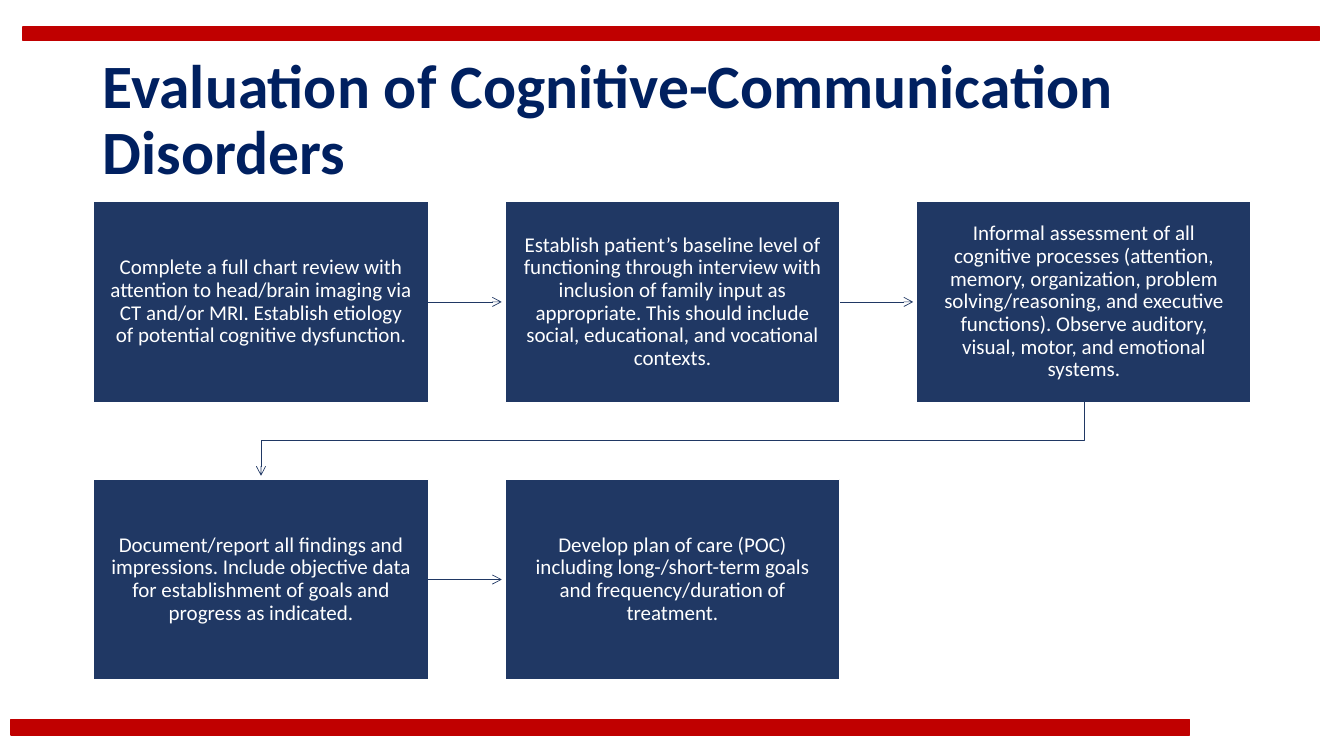
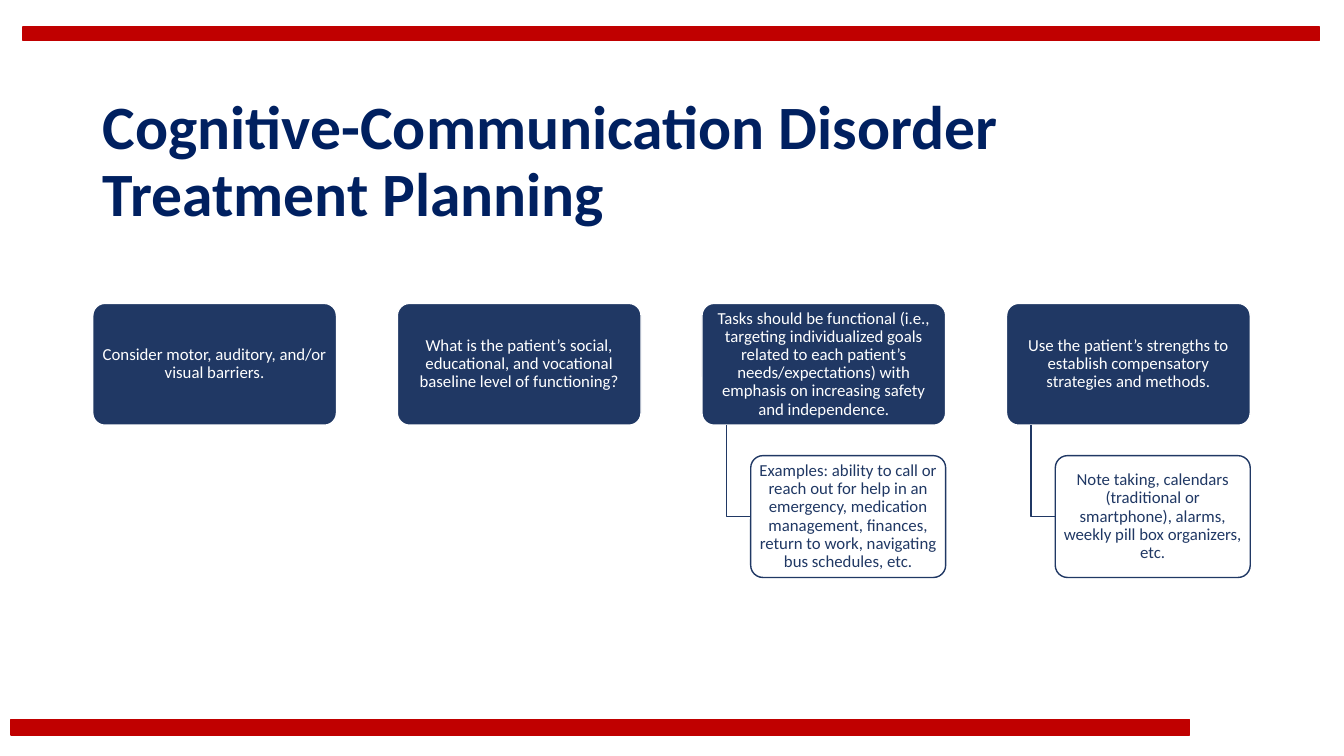
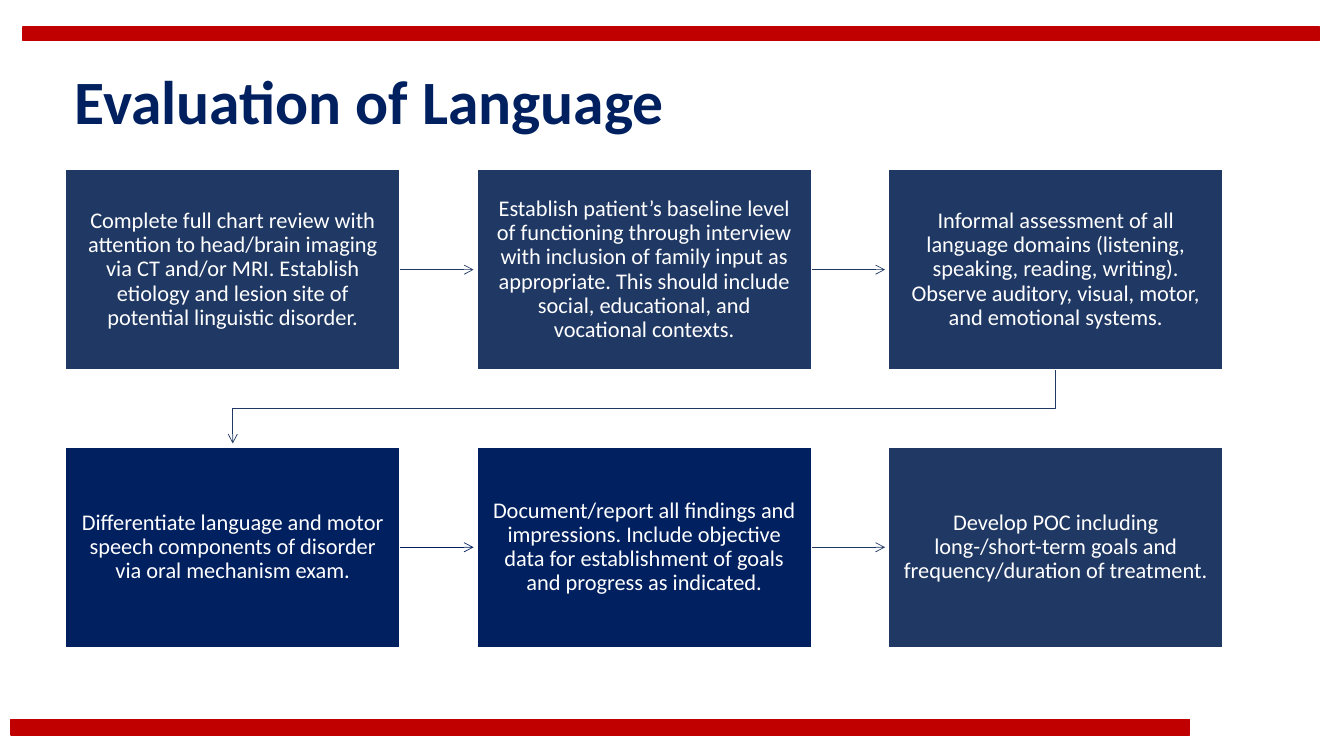
from collections import namedtuple
from itertools import pairwise

from lxml.etree import SubElement
from pptx import Presentation
from pptx.dml.color import RGBColor
from pptx.enum.shapes import MSO_CONNECTOR, MSO_SHAPE
from pptx.enum.text import MSO_ANCHOR, MSO_AUTO_SIZE, PP_ALIGN
from pptx.oxml.ns import qn
from pptx.util import Inches, Pt

COLORS = {"red": "C00000", "navy": "002060", "slate": "203864", "white": "FFFFFF"}
FONT = "Calibri"
SLIDE_WIDTH, SLIDE_HEIGHT = 13.33, 7.5
TITLE_WIDTH, TITLE_HEIGHT = 11.5, 1.45
FLOW_WIDTH = 11.48

Box = namedtuple("Box", "left top width height")
BANDS = [Box(0.11, 7.14, 11.69, 0.15), Box(0.23, 0.27, 12.86, 0.13)]

COGNITIVE_STEPS = [
    ("Complete a full chart review with attention to head/brain imaging via CT and/or MRI. "
     "Establish etiology of potential cognitive dysfunction.", "slate"),
    ("Establish patient’s baseline level of functioning through interview with inclusion of "
     "family input as appropriate. This should include social, educational, and vocational "
     "contexts.", "slate"),
    ("Informal assessment of all cognitive processes (attention, memory, organization, problem "
     "solving/reasoning, and executive functions). Observe auditory, visual, motor, and "
     "emotional systems.", "slate"),
    ("Document/report all findings and impressions. Include objective data for establishment "
     "of goals and progress as indicated.", "slate"),
    ("Develop plan of care (POC) including long-/short-term goals and frequency/duration of "
     "treatment.", "slate"),
]
LANGUAGE_STEPS = [
    ("Complete full chart review with attention to head/brain imaging via CT and/or MRI. "
     "Establish etiology and lesion site of potential linguistic disorder.", "slate"),
    COGNITIVE_STEPS[1],
    ("Informal assessment of all language domains (listening, speaking, reading, writing). "
     "Observe auditory, visual, motor, and emotional systems.", "slate"),
    ("Differentiate language and motor speech components of disorder via oral mechanism exam.",
     "navy"),
    (COGNITIVE_STEPS[3][0], "navy"),
    ("Develop POC including long-/short-term goals and frequency/duration of treatment.",
     "slate"),
]
PLANNING_TOPICS = [
    ("Consider motor, auditory, and/or visual barriers.", None),
    ("What is the patient’s social, educational, and vocational baseline level of functioning?",
     None),
    ("Tasks should be functional (i.e., targeting individualized goals related to each "
     "patient’s needs/expectations) with emphasis on increasing safety and independence.",
     "Examples: ability to call or reach out for help in an emergency, medication management, "
     "finances, return to work, navigating bus schedules, etc."),
    ("Use the patient’s strengths to establish compensatory strategies and methods.",
     "Note taking, calendars (traditional or smartphone), alarms, weekly pill box organizers, "
     "etc."),
]


def rgb(name):
    """Return the named palette colour."""
    return RGBColor.from_string(COLORS[name])


def inches(*lengths):
    """Convert lengths to slide units."""
    return [Inches(length) for length in lengths]


def write(frame, text, size, color, bold=False, align=PP_ALIGN.CENTER):
    """Put one formatted paragraph in a text frame."""
    frame.word_wrap = True
    frame.auto_size = MSO_AUTO_SIZE.NONE
    frame.vertical_anchor = MSO_ANCHOR.MIDDLE
    para = frame.paragraphs[0]
    para.alignment = align
    para.line_spacing = 0.9
    span = para.add_run()
    span.text = text
    span.font.name = FONT
    span.font.size = Pt(size)
    span.font.bold = bold
    span.font.color.rgb = rgb(color)


def add_panel(page, box, fill, line, kind=MSO_SHAPE.RECTANGLE):
    """Draw a filled, outlined preset shape."""
    panel = page.shapes.add_shape(kind, *inches(*box))
    panel.shadow.inherit = False
    panel.fill.solid()
    panel.fill.fore_color.rgb = rgb(fill)
    panel.line.color.rgb = rgb(line)
    panel.line.width = Pt(1)
    return panel


def add_card(page, box, text, size, inset, fill="slate", line="white", color="white",
             kind=MSO_SHAPE.RECTANGLE):
    """Draw a panel holding centred text."""
    card = add_panel(page, box, fill, line, kind)
    frame = card.text_frame
    frame.margin_left = frame.margin_right = Inches(inset[0])
    frame.margin_top = frame.margin_bottom = Inches(inset[1])
    write(frame, text, size, color)
    return card


def add_path(page, points, color="slate", width=0.5, arrow=False):
    """Draw a straight connector or an angled line through the points."""
    start, *rest = [inches(*point) for point in points]
    if len(rest) == 1:
        path_line = page.shapes.add_connector(MSO_CONNECTOR.STRAIGHT, *start, *rest[0])
    else:
        builder = page.shapes.build_freeform(*start)
        builder.add_line_segments(rest, close=False)
        path_line = builder.convert_to_shape()
        path_line.fill.background()
    path_line.line.color.rgb = rgb(color)
    path_line.line.width = Pt(width)
    properties = path_line.element.spPr
    SubElement(properties, qn("a:effectLst"))
    if arrow:
        SubElement(properties.find(qn("a:ln")), qn("a:tailEnd"), type="arrow")


def add_bands(page, layout):
    """Place the red bands in the layout, behind its placeholders."""
    for number, box in enumerate(BANDS):
        band = add_panel(page, box, "red", "red").element
        band.nvSpPr.cNvPr.id = 100 + number
        layout.shapes.element.insert(2 + number, band)


def add_page(deck, title, left, top):
    """Add a slide with its title at the given corner."""
    page = deck.slides.add_slide(deck.slide_layouts[5])
    holder = page.shapes.title
    holder.left, holder.top, holder.width, holder.height = inches(
        left, top, TITLE_WIDTH, TITLE_HEIGHT)
    write(holder.text_frame, title, 44, "navy", bold=True, align=PP_ALIGN.LEFT)
    return page


def add_flow(page, left, top, steps, size, inset, columns=3):
    """Draw process steps row by row, joined by arrows."""
    width = FLOW_WIDTH / (columns + 0.23 * (columns - 1))
    height, gap = 0.6 * width, 0.23 * width
    reach = 0.955 * gap
    boxes = [Box(left + index % columns * (width + gap),
                 top + index // columns * (height + gap), width, height)
             for index in range(len(steps))]
    for box, (text, fill) in zip(boxes, steps):
        add_card(page, box, text, size, inset, fill=fill)
    for (box, following), (text, fill) in zip(pairwise(boxes), steps[1:]):
        if box.top == following.top:
            edge, middle = box.left + width, box.top + height / 2
            add_path(page, [(edge, middle), (edge + reach, middle)], fill, arrow=True)
        else:
            start, end = box.left + width / 2, following.left + width / 2
            edge = box.top + height
            add_path(page, [(start, edge), (start, edge + gap / 2), (end, edge + gap / 2),
                            (end, edge + reach)], arrow=True)


def add_hierarchy(page, left, top, topics):
    """Draw a row of topics, each with an optional example hung below."""
    width = FLOW_WIDTH / (len(topics) + 0.25 * (len(topics) - 1))
    height = width / 2
    look = {"size": 12, "inset": (0.03, 0.02), "kind": MSO_SHAPE.ROUNDED_RECTANGLE}
    for index, (topic, example) in enumerate(topics):
        box = Box(left + index * 1.25 * width, top, width, height)
        cards = [add_card(page, box, topic, **look)]
        if example:
            child = Box(box.left + 0.2 * width, top + 1.25 * height, 0.8 * width, height)
            stem, middle = box.left + 0.1 * width, child.top + height / 2
            add_path(page, [(stem, top + height), (stem, middle), (child.left, middle)], width=1)
            cards.append(add_card(page, child, example, fill="white", line="slate",
                                  color="slate", **look))
        for card in cards:
            card.adjustments[0] = 0.1


def main():
    """Build and save the deck."""
    deck = Presentation()
    deck.slide_width, deck.slide_height = inches(SLIDE_WIDTH, SLIDE_HEIGHT)

    page = add_page(deck, "Evaluation of Cognitive-Communication Disorders", 0.92, 0.48)
    add_bands(page, page.slide_layout)
    add_flow(page, 0.93, 2, COGNITIVE_STEPS, 15, (0.16, 0.17))

    page = add_page(deck, "Cognitive-Communication Disorder Treatment Planning", 0.92, 0.89)
    add_hierarchy(page, 0.92, 3.01, PLANNING_TOPICS)

    page = add_page(deck, "Evaluation of Language", 0.64, 0.31)
    add_flow(page, 0.65, 1.68, LANGUAGE_STEPS, 16, (0.12, 0.12))

    deck.save("out.pptx")


if __name__ == "__main__":
    main()
